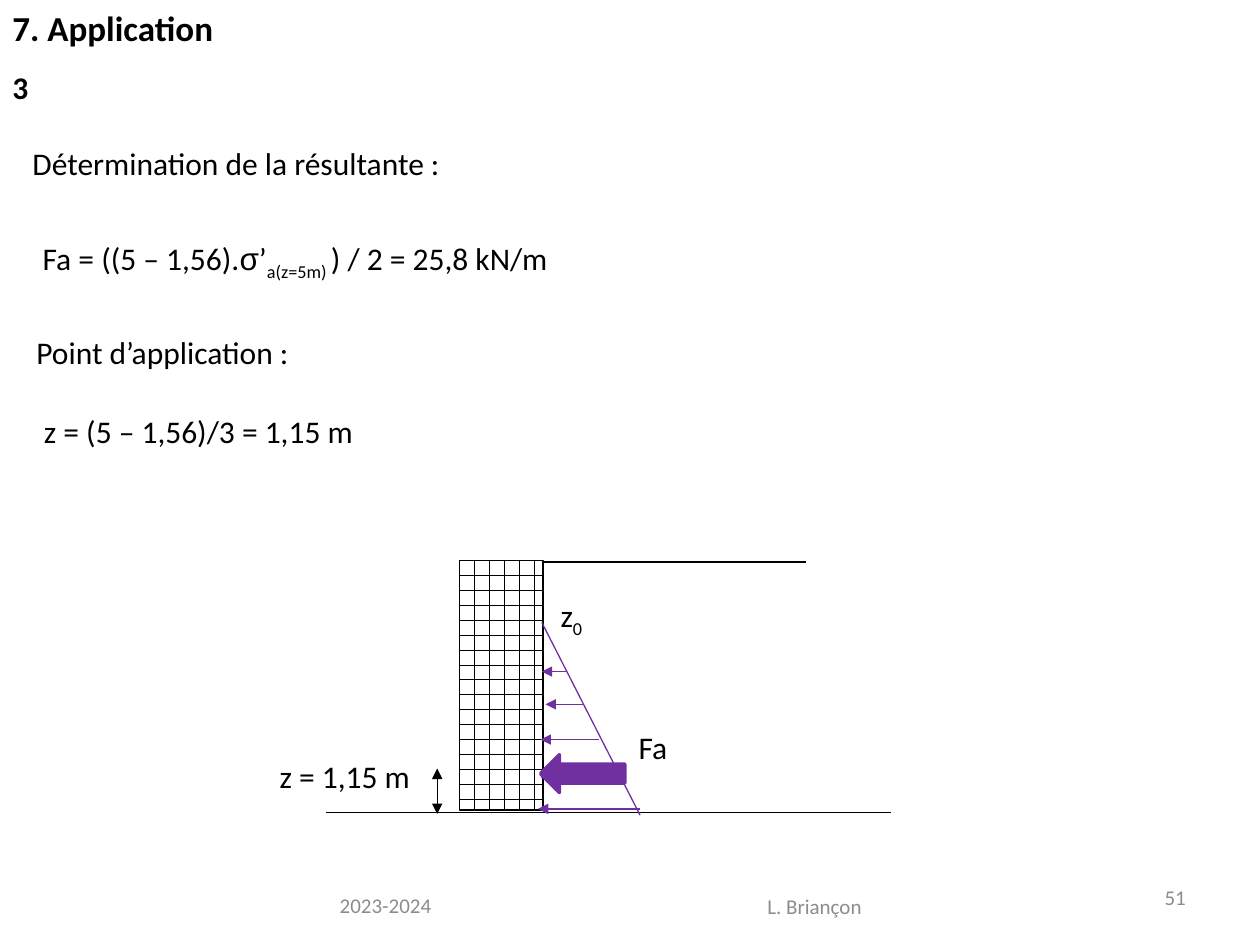
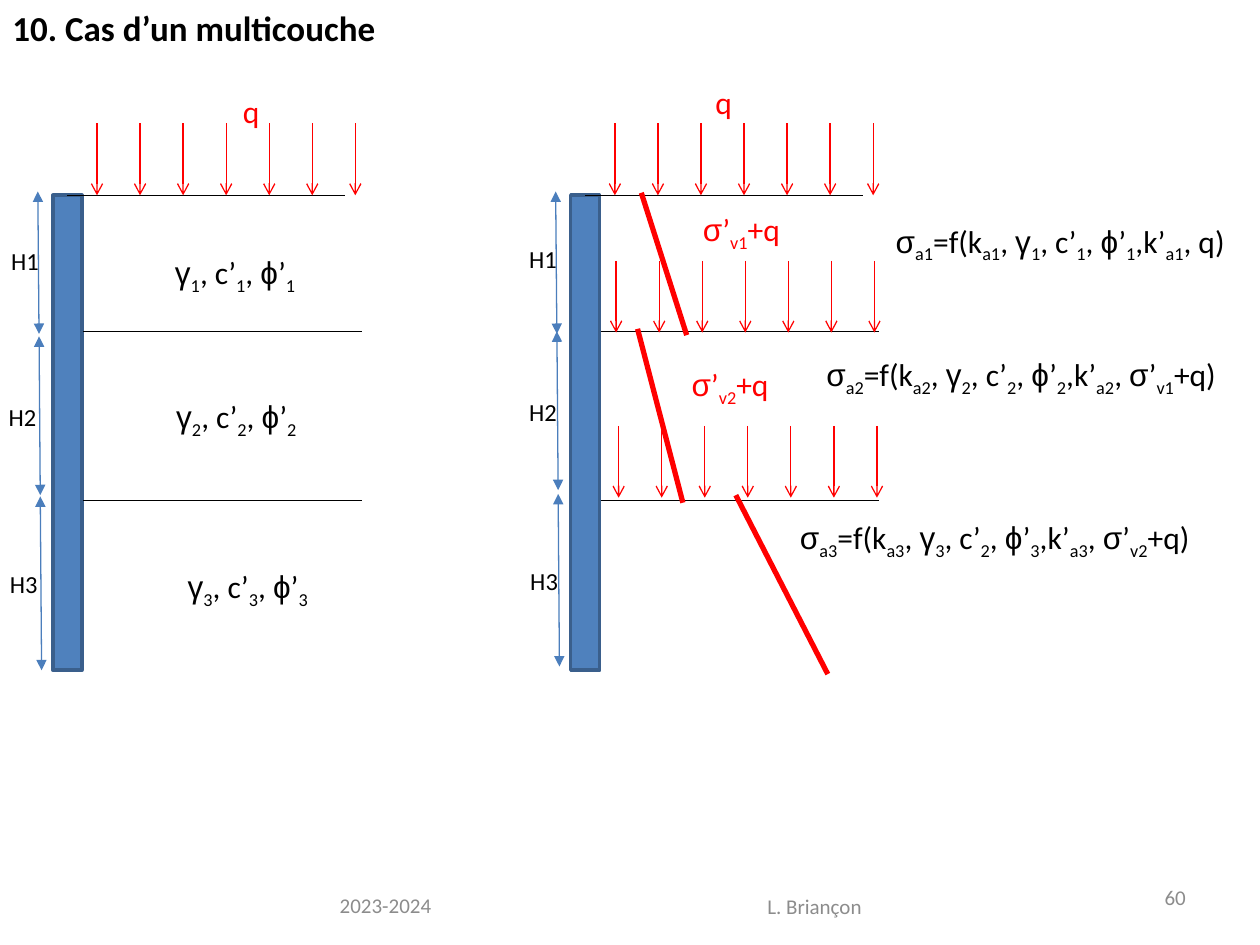
"""Builds two slides on earth pressure: one worked case and one layered soil."""
from itertools import groupby
from lxml.etree import SubElement
from pptx import Presentation
from pptx.dml.color import RGBColor
from pptx.enum.dml import MSO_PATTERN
from pptx.enum.shapes import MSO_CONNECTOR, MSO_SHAPE as Shape
from pptx.enum.text import MSO_ANCHOR as Anchor, MSO_AUTO_SIZE as Fit, PP_ALIGN as Align
from pptx.oxml.ns import qn
from pptx.util import Inches, Pt

WIDTH, HEIGHT = Inches(10), Inches(7.5)
COLS, ROWS = 10, 7.5
BLACK, WHITE = RGBColor(0, 0, 0), RGBColor(255, 255, 255)
GREY, RED = RGBColor(0x8C, 0x8C, 0x8C), RGBColor(255, 0, 0)
PURPLE, BLUE = RGBColor(0x70, 0x30, 0xA0), RGBColor(0x4F, 0x81, 0xBD)
EDGE, DIM = RGBColor(0x3A, 0x5F, 0x8C), RGBColor(0x4B, 0x7E, 0xBC)
GREEK = "σγϕ"

FOOT = [("2023-2024", (1.56, 6.98, 3), Align.CENTER),
        ("L. Briançon", (4.88, 6.99, 3.17), Align.CENTER)]
PAGE = (7.18, 6.92, 2.33)

CASE = {
    "title": ("7. Application", 1.81), "page": "51",
    "texts": [
        ("Détermination de la résultante\u00a0:", (0.16, 1.09, 3.53)),
        ("Fa = ((5 – 1,56).σ’|a(z=5m) |) / 2 = 25,8 kN/m", (0.24, 1.85, 4.32)),
        ("Point d’application :", (0.19, 2.59, 2.29)),
        ("z = (5 – 1,56)/3 = 1,15 m", (0.25, 3.22, 2.69)),
        ("z|0|", (4.35, 4.68, 0.39)),
        ("Fa", (4.97, 5.73, 0.43)),
        ("z = 1,15 m", (2.12, 5.96, 1.25))],
    "ground": [(4.3, 4.46, 6.4, 4.46), (2.59, 6.45, 7.07, 6.45)],
    "slope": (4.3, 4.94, 5.08, 6.47),
    "push": [(4.5, 4.3, 5.33), (4.63, 4.33, 5.59), (4.75, 4.29, 5.87),
             (4.9, 4.29, 6.17), (5.08, 4.27, 6.42)],
}

LAYERS = {
    "title": ("10. Cas d’un multicouche", 3.11), "page": "60",
    "levels": [1.55, 2.63, 3.97],
    "soils": [(1.29, 1.96), (1.3, 3.1), (1.39, 4.45)],
    "panels": [
        {"left": 0.42,
         "spans": [(1.52, 2.65), (2.67, 3.93), (3.94, 5.32)],
         "names": [(-0.01, 1.9), (-0.03, 3.14), (-0.02, 4.47)],
         "loads": [("q", (1.83, 0.68, 0.34), (0.77, 0.98))]},
        {"left": 4.53,
         "spans": [(1.52, 2.65), (2.63, 3.89), (3.92, 5.29)],
         "names": [(4.1, 1.89), (4.1, 3.1), (4.11, 4.44)],
         "loads": [("q", (5.58, 0.61, 0.34), (4.88, 0.98)),
                   ("σ’|v1|+q", (5.48, 1.62, 0.84), (4.89, 2.07)),
                   ("σ’|v2|+q", (5.39, 2.85, 0.84), (4.91, 3.38))]}],
    "stress": [(5.09, 1.53, 5.45, 2.66), (5.06, 2.61, 5.42, 3.99),
               (5.84, 3.93, 6.57, 5.35)],
    "laws": [
        ("σ|a1|=f(k|a1|, γ|1|, c’|1|, ϕ’|1|,k’|a1|, q)", (7.01, 1.71, 2.99)),
        ("σ|a2|=f(k|a2|, γ|2|, c’|2|, ϕ’|2|,k’|a2|, σ’|v1|+q)", (6.46, 2.77, 3.41)),
        ("σ|a3|=f(k|a3|, γ|3|, c’|2|, ϕ’|3|,k’|a3|, σ’|v2|+q)", (6.25, 4.06, 3.41))],
}
LOADS, REACH, DROP = 7, 2.05, 0.57


def grid(*spots):
    """Turn alternating columns and rows into slide lengths."""
    units = (WIDTH / COLS, HEIGHT / ROWS)
    return [round(spot * units[i % 2]) for i, spot in enumerate(spots)]


def write(slide, text, at, size=18, color=BLACK, bold=False, align=Align.LEFT,
          wrap=False, high=0.4):
    """Add a text box; pieces between bars are subscripts, Greek is in Arial."""
    frame = slide.shapes.add_textbox(*grid(*at, high)).text_frame
    frame.word_wrap = wrap
    frame.auto_size = Fit.NONE if wrap else Fit.SHAPE_TO_FIT_TEXT
    frame.vertical_anchor = Anchor.MIDDLE if wrap else Anchor.TOP
    para = frame.paragraphs[0]
    para.alignment = align
    for i, piece in enumerate(text.split("|")):
        for greek, chars in groupby(piece, lambda char: char in GREEK):
            run = para.add_run()
            run.text = "".join(chars)
            font = run.font
            font.name = "Arial" if greek else "Calibri"
            font.size, font.bold = Pt(size), bold
            font.color.rgb = color
            if i % 2:
                run._r.get_or_add_rPr().set("baseline", "-25000")


def draw(slide, ends, color=BLACK, width=0.75, head=None, tail=None):
    """Add a straight line with optional arrowheads."""
    link = slide.shapes.add_connector(MSO_CONNECTOR.STRAIGHT, *grid(*ends))
    link.line.color.rgb, link.line.width = color, Pt(width)
    props = link._element.spPr
    for tag, kind in (("a:headEnd", head), ("a:tailEnd", tail)):
        if kind:
            SubElement(props.find(qn("a:ln")), qn(tag), type=kind)
    SubElement(props, qn("a:effectLst"))
    return link


def block(slide, kind, at, fill, edge, width):
    """Add a preset shape; no fill colour means a brick pattern."""
    shape = slide.shapes.add_shape(kind, *grid(*at))
    shape.shadow.inherit = False
    if fill is None:
        shape.fill.patterned()
        shape.fill.pattern = MSO_PATTERN.HORIZONTAL_BRICK
        shape.fill.fore_color.rgb, shape.fill.back_color.rgb = BLACK, WHITE
    else:
        shape.fill.solid()
        shape.fill.fore_color.rgb = fill
    shape.line.color.rgb, shape.line.width = edge, Pt(width)
    return shape


def start(deck, data):
    """Add a blank slide with its title and footers."""
    slide = deck.slides.add_slide(deck.slide_layouts[6])
    title, wide = data["title"]
    write(slide, title, (0, 0, wide), size=20, bold=True, high=0.44)
    for text, at, align in FOOT + [(data["page"], PAGE, Align.RIGHT)]:
        write(slide, text, at, size=12, color=GREY, align=align, wrap=True)
    return slide


def case(deck):
    """Draw the wall with its triangular pressure and resultant."""
    slide = start(deck, CASE)
    write(slide, "3", (0, 0.49, 0.33), bold=True)
    block(slide, Shape.RECTANGLE, (3.65, 4.45, 0.66, 1.98), None, BLACK, 0.75)
    for ends in CASE["ground"]:
        draw(slide, ends)
    draw(slide, CASE["slope"], PURPLE)
    for right, left, y in CASE["push"]:
        draw(slide, (right, y, left, y), PURPLE, tail="triangle")
    block(slide, Shape.LEFT_ARROW, (4.29, 5.99, 0.67, 0.3), PURPLE, PURPLE, 2)
    draw(slide, (3.47, 6.1, 3.47, 6.46), head="triangle", tail="triangle")
    for text, at in CASE["texts"]:
        write(slide, text, at)


def panel(slide, left, spans, names, loads):
    """Draw one wall with its layers, heights and loads."""
    top, *lower = LAYERS["levels"]
    wall = block(slide, Shape.RECTANGLE, (left, top, 0.23, 3.77), BLUE, EDGE, 2)
    draw(slide, (left + 0.11, top, left + 2.32, top)).begin_connect(wall, 0)
    for y in lower:
        draw(slide, (left + 0.24, y, left + 2.45, y))
    for n, ((high, low), at) in enumerate(zip(spans, names), 1):
        x = left - 0.13 + n * 0.01
        draw(slide, (x, high, x + 0.01, low), DIM, head="triangle", tail="triangle")
        write(slide, f"H{n}", (*at, 0.42), size=14, high=0.34)
    for text, at, (x, y) in loads:
        write(slide, text, at, color=RED)
        for i in range(LOADS):
            spot = x + i * REACH / (LOADS - 1)
            draw(slide, (spot, y, spot, y + DROP), RED, tail="arrow")


def layers(deck):
    """Draw the soil layers beside the stresses they cause."""
    slide = start(deck, LAYERS)
    for part in LAYERS["panels"]:
        panel(slide, **part)
    for n, at in enumerate(LAYERS["soils"], 1):
        write(slide, f"γ|{n}|, c’|{n}|, ϕ’|{n}|", (*at, 1.19))
    for ends in LAYERS["stress"]:
        draw(slide, ends, RED, 3)
    for text, at in LAYERS["laws"]:
        write(slide, text, at)


def main():
    """Build and save the deck."""
    deck = Presentation()
    deck.slide_width, deck.slide_height = WIDTH, HEIGHT
    case(deck)
    layers(deck)
    deck.save("out.pptx")


if __name__ == "__main__":
    main()
